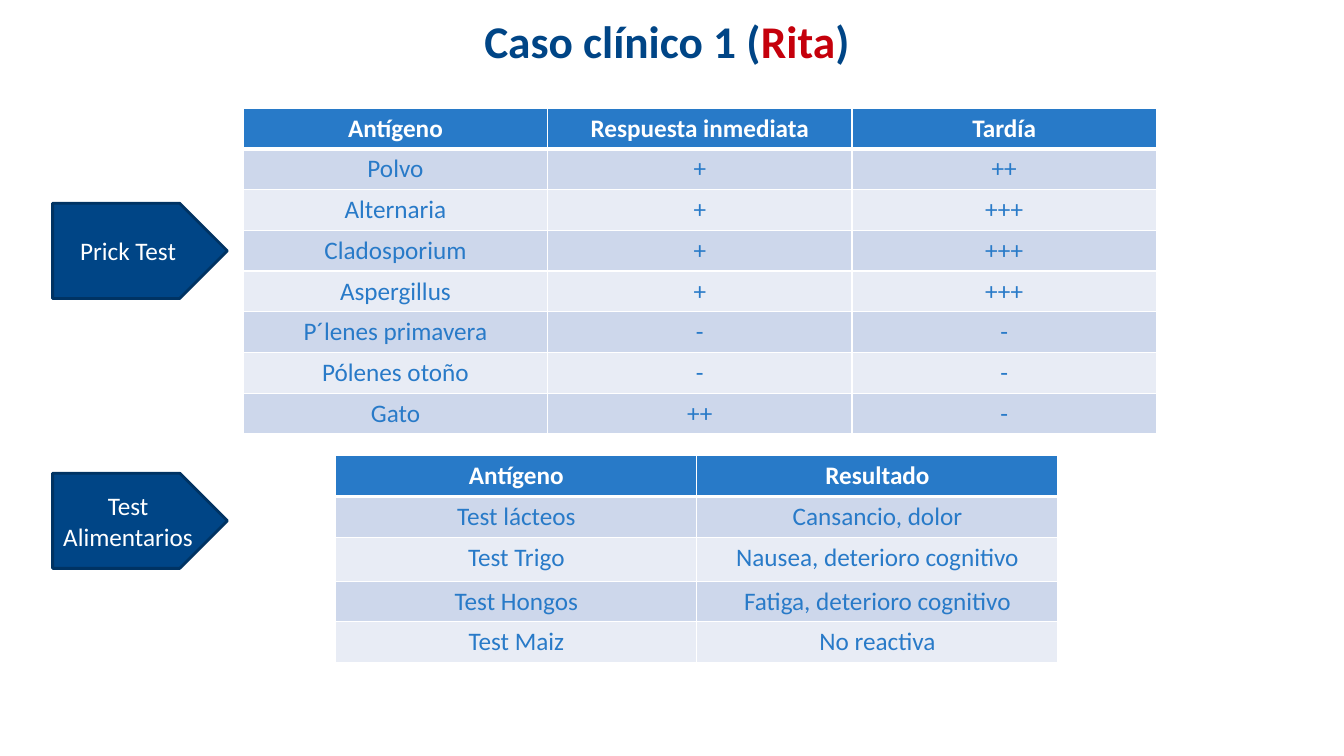
from pptx import Presentation
from pptx.dml.color import RGBColor
from pptx.enum.shapes import MSO_SHAPE
from pptx.enum.text import MSO_ANCHOR, PP_ALIGN
from pptx.oxml import parse_xml
from pptx.oxml.ns import nsdecls
from pptx.util import Pt

FONT = "Calibri"
WHITE = RGBColor(0xFF, 0xFF, 0xFF)
NAVY = RGBColor(0x00, 0x45, 0x86)
DARK_NAVY = RGBColor(0x00, 0x33, 0x63)
RED = RGBColor(0xC5, 0x00, 0x0B)
BLUE = RGBColor(0x28, 0x7A, 0xC8)
BANDS = (RGBColor(0xCD, 0xD7, 0xEB), RGBColor(0xE8, 0xEC, 0xF5))

TITLE = [("Caso clínico 1 (", NAVY), ("Rita", RED), (") ", NAVY)]
PRICK_ROWS = [
    ("Antígeno", "Respuesta inmediata", "Tardía"),
    ("Polvo", "+", "++"),
    ("Alternaria", "+", "+++"),
    ("Cladosporium", "+", "+++"),
    ("Aspergillus", "+", "+++"),
    ("P´lenes primavera", "-", "-"),
    ("Pólenes otoño", "-", "-"),
    ("Gato", "++", "-"),
]
FOOD_ROWS = [
    ("Antígeno", "Resultado"),
    ("Test lácteos", "Cansancio, dolor"),
    ("Test Trigo", "Nausea, deterioro cognitivo"),
    ("Test Hongos", "Fatiga, deterioro cognitivo"),
    ("Test Maiz", "No reactiva"),
]
ROW_HEIGHT = 29.1
# rows, left, top, column width, heights of the rows that differ
TABLES = [
    (PRICK_ROWS, 173.8, 77.3, 217.4, {}),
    (FOOD_ROWS, 239.8, 325.6, 258, {2: 31.4}),
]
ARROWS = [("Prick Test", 145.2), ("Test Alimentarios", 338)]


def write(text_frame, pieces, size=18, bold=False):
    """Fill the frame with one centred paragraph of (text, color) pieces."""
    text_frame.word_wrap = True
    text_frame.vertical_anchor = MSO_ANCHOR.MIDDLE
    paragraph = text_frame.paragraphs[0]
    paragraph.alignment = PP_ALIGN.CENTER
    for text, color in pieces:
        run = paragraph.add_run()
        run.text = text
        run.font.name = FONT
        run.font.size = Pt(size)
        run.font.bold = bold
        run.font.color.rgb = color


def add_borders(cell, top, bottom):
    """Draw white borders; they must be added before the cell's fill."""
    properties = cell._tc.get_or_add_tcPr()
    for side, width in (("L", 1), ("R", 1), ("T", top), ("B", bottom)):
        properties.append(parse_xml(
            f'<a:ln{side} {nsdecls("a")} w="{Pt(width)}"><a:solidFill>'
            f'<a:srgbClr val="{WHITE}"/></a:solidFill></a:ln{side}>'))


def add_results_table(slide, rows, left, top, column_width, special_heights):
    columns = len(rows[0])
    heights = [special_heights.get(i, ROW_HEIGHT) for i in range(len(rows))]
    table = slide.shapes.add_table(
        len(rows), columns, Pt(left), Pt(top),
        Pt(column_width * columns), Pt(sum(heights))).table
    for column in table.columns:
        column.width = Pt(column_width)
    for i, row in enumerate(rows):
        header = i == 0
        table.rows[i].height = Pt(heights[i])
        for j, text in enumerate(row):
            cell = table.cell(i, j)
            add_borders(cell, top=3 if i == 1 else 1, bottom=3 if header else 1)
            cell.fill.solid()
            cell.fill.fore_color.rgb = BLUE if header else BANDS[(i - 1) % 2]
            write(cell.text_frame, [(text, WHITE if header else BLUE)], bold=header)
            cell.vertical_anchor = MSO_ANCHOR.TOP


def add_arrow(slide, text, top):
    arrow = slide.shapes.add_shape(
        MSO_SHAPE.PENTAGON, Pt(37.6), Pt(top), Pt(124.8), Pt(68))
    arrow.shadow.inherit = False
    arrow.fill.solid()
    arrow.fill.fore_color.rgb = NAVY
    arrow.line.color.rgb = DARK_NAVY
    arrow.line.width = Pt(2)
    write(arrow.text_frame, [(text, WHITE)])


def main():
    presentation = Presentation()
    presentation.slide_width, presentation.slide_height = Pt(960), Pt(540)
    slide = presentation.slides.add_slide(presentation.slide_layouts[6])
    title = slide.shapes.add_textbox(Pt(48), Pt(9.5), Pt(864), Pt(39))
    write(title.text_frame, TITLE, size=32.4, bold=True)
    for table in TABLES:
        add_results_table(slide, *table)
    for text, top in ARROWS:
        add_arrow(slide, text, top)
    presentation.save("out.pptx")


if __name__ == "__main__":
    main()
